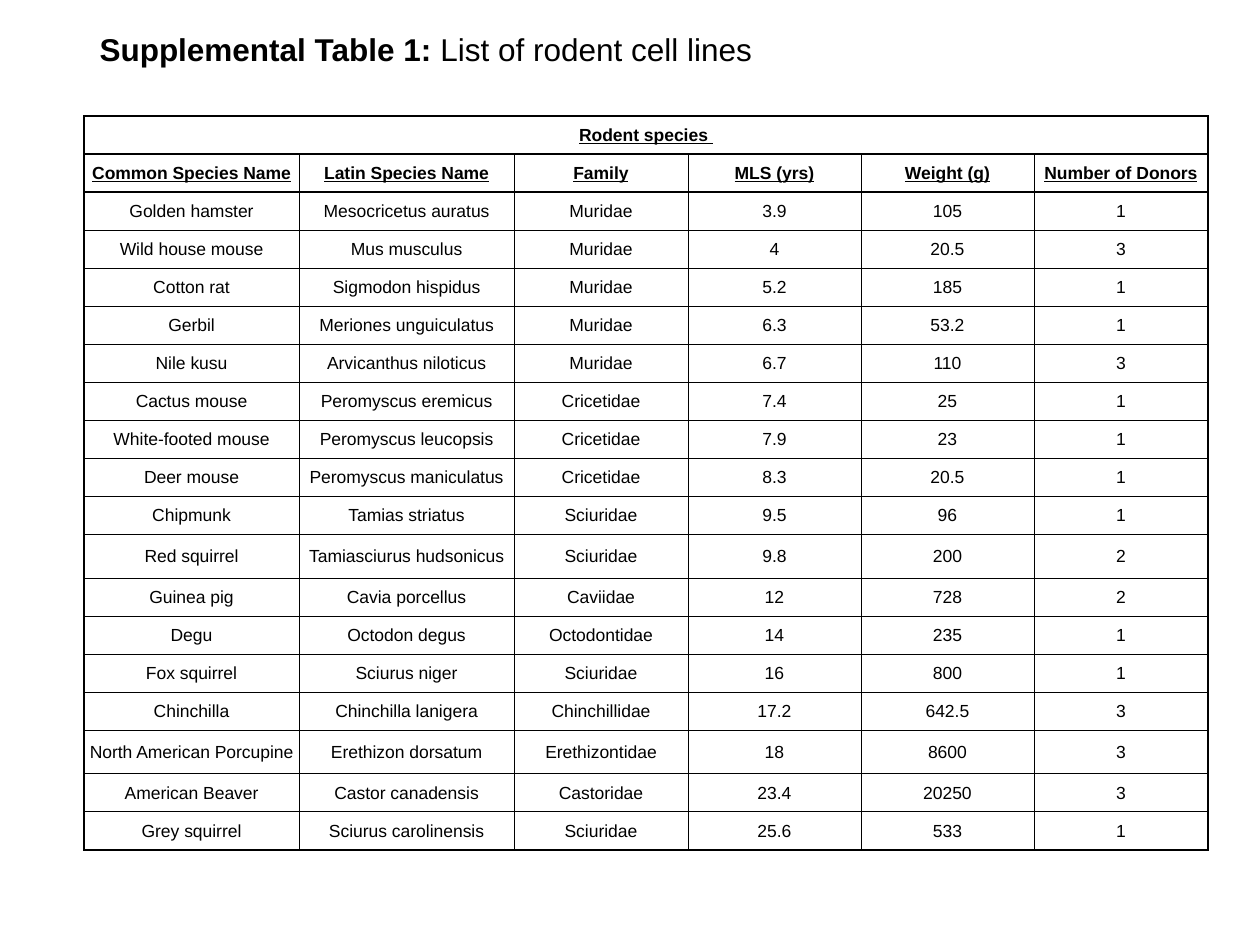
from lxml.etree import SubElement
from pptx import Presentation
from pptx.dml.color import RGBColor
from pptx.enum.text import MSO_ANCHOR as Anchor, MSO_AUTO_SIZE as AutoSize, PP_ALIGN as Align
from pptx.oxml.ns import qn
from pptx.util import Pt

PX = 914400 // 126
FONT, BLACK = "Arial", "000000"
TITLE = (("Supplemental Table 1: ", True), ("List of rodent cell lines", False))
GROUP = "Rodent species "
HEADERS = ("Common Species Name", "Latin Species Name", "Family",
           "MLS (yrs)", "Weight (g)", "Number of Donors")
SPECIES = [
    ("Golden hamster", "Mesocricetus auratus", "Muridae", "3.9", "105", "1"),
    ("Wild house mouse", "Mus musculus", "Muridae", "4", "20.5", "3"),
    ("Cotton rat", "Sigmodon hispidus", "Muridae", "5.2", "185", "1"),
    ("Gerbil", "Meriones unguiculatus", "Muridae", "6.3", "53.2", "1"),
    ("Nile kusu", "Arvicanthus niloticus", "Muridae", "6.7", "110", "3"),
    ("Cactus mouse", "Peromyscus eremicus", "Cricetidae", "7.4", "25", "1"),
    ("White-footed mouse", "Peromyscus leucopsis", "Cricetidae", "7.9", "23", "1"),
    ("Deer mouse", "Peromyscus maniculatus", "Cricetidae", "8.3", "20.5", "1"),
    ("Chipmunk", "Tamias striatus", "Sciuridae", "9.5", "96", "1"),
    ("Red squirrel", "Tamiasciurus hudsonicus", "Sciuridae", "9.8", "200", "2"),
    ("Guinea pig", "Cavia porcellus", "Caviidae", "12", "728", "2"),
    ("Degu", "Octodon degus", "Octodontidae", "14", "235", "1"),
    ("Fox squirrel", "Sciurus niger", "Sciuridae", "16", "800", "1"),
    ("Chinchilla", "Chinchilla lanigera", "Chinchillidae", "17.2", "642.5", "3"),
    ("North American Porcupine", "Erethizon dorsatum", "Erethizontidae", "18", "8600", "3"),
    ("American Beaver", "Castor canadensis", "Castoridae", "23.4", "20250", "3"),
    ("Grey squirrel", "Sciurus carolinensis", "Sciuridae", "25.6", "533", "1"),
]
COLUMN_WIDTHS = (215, 215, 174, 173, 173, 174)
ROW_HEIGHT, TALL_HEIGHT = 38, 44
TALL_SPECIES = ("Red squirrel", "North American Porcupine")
CELL_FORMAT = dict(vertical_anchor=Anchor.MIDDLE, margin_left=PX, margin_top=PX,
                   margin_right=PX, margin_bottom=0)


def apply(target, **values):
    for name, value in values.items():
        setattr(target, name, value)


def add_span(para, text, size, bold, underline=False):
    span = para.add_run()
    span.text = text
    apply(span.font, name=FONT, size=Pt(size), bold=bold, underline=underline)
    span.font.color.rgb = RGBColor.from_string(BLACK)


def set_borders(cell, heavy):
    """Draw each side in black, 1 pt where heavy and 0.5 pt elsewhere."""
    props = cell._tc.get_or_add_tcPr()
    for index, (side, is_heavy) in enumerate(heavy.items()):
        line = SubElement(props, qn(f"a:ln{side}"), w=str(Pt(1 if is_heavy else 0.5)))
        SubElement(SubElement(line, qn("a:solidFill")), qn("a:srgbClr"), val=BLACK)
        props.insert(index, line)


deck = Presentation()
apply(deck, slide_width=1260 * PX, slide_height=945 * PX)
page = deck.slides.add_slide(deck.slide_layouts[5])

# Title
title = page.shapes.title
apply(title, left=87 * PX, top=24 * PX, width=706 * PX, height=51 * PX)
apply(title.text_frame, word_wrap=False, auto_size=AutoSize.SHAPE_TO_FIT_TEXT,
      vertical_anchor=Anchor.TOP)
para = title.text_frame.paragraphs[0]
para.alignment = Align.LEFT
for text, bold in TITLE:
    add_span(para, text, 18, bold)

# Table grid
rows = [(GROUP,), HEADERS, *SPECIES]
heights = [TALL_HEIGHT if row[0] in TALL_SPECIES else ROW_HEIGHT for row in rows]
last_row, last_col = len(rows) - 1, len(HEADERS) - 1
table = page.shapes.add_table(len(rows), len(HEADERS), 84 * PX, 116 * PX,
                              sum(COLUMN_WIDTHS) * PX, sum(heights) * PX).table
apply(table, first_row=False, horz_banding=False)
for column, width in zip(table.columns, COLUMN_WIDTHS):
    column.width = width * PX
for table_row, height in zip(table.rows, heights):
    table_row.height = height * PX
table.cell(0, 0).merge(table.cell(0, last_col))

# Cell fill, borders and text
for r, row in enumerate(rows):
    for c in range(len(HEADERS)):
        cell = table.cell(r, c)
        apply(cell, **CELL_FORMAT)
        cell.fill.background()
        set_borders(cell, {"L": r == 0 or c == 0, "R": r == 0 or c == last_col,
                           "T": r <= 2, "B": r <= 1 or r == last_row})
        if c < len(row):
            para = cell.text_frame.paragraphs[0]
            para.alignment = Align.CENTER
            add_span(para, row[c], 10, bold=r <= 1, underline=r <= 1)

deck.save("out.pptx")
